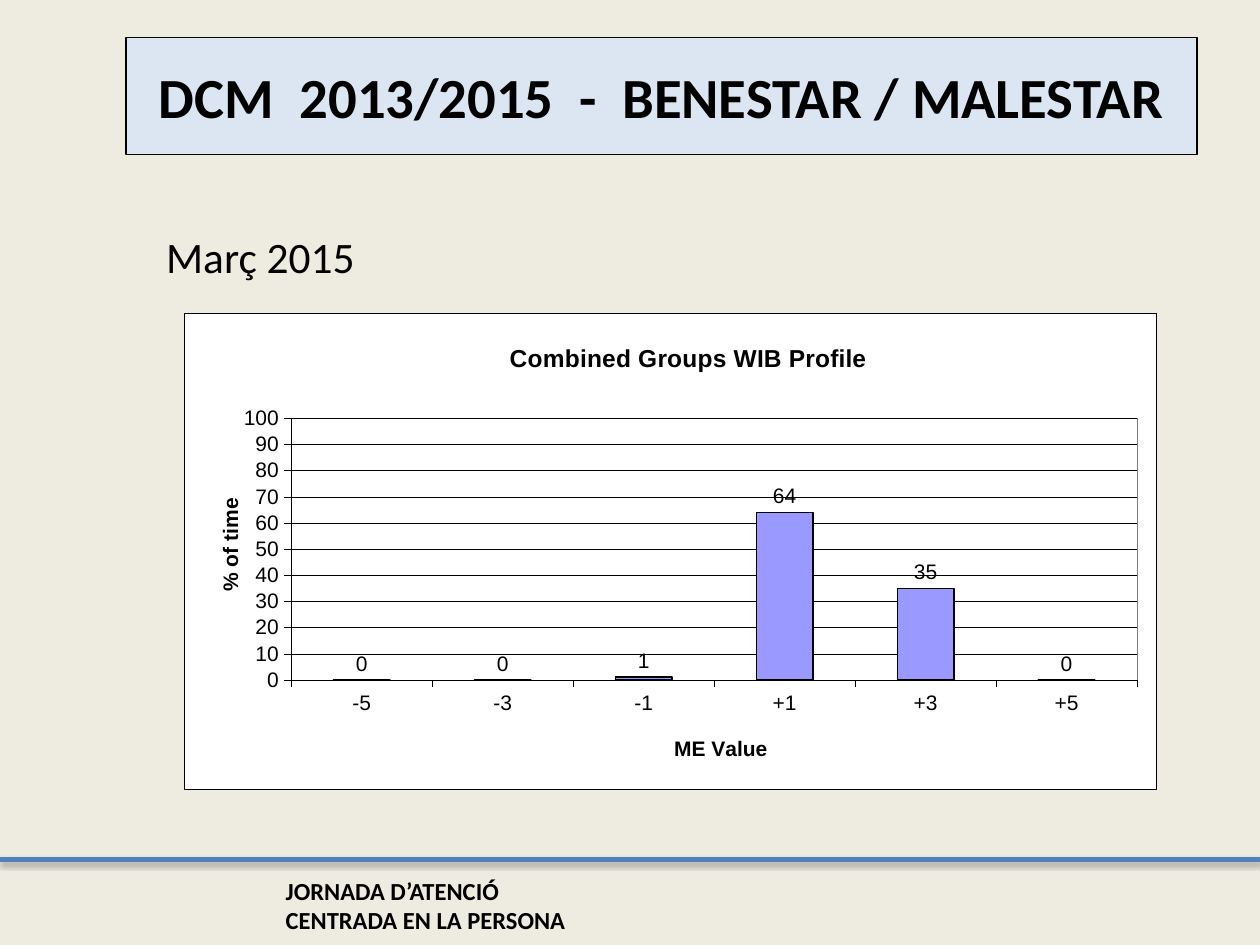
import pptx
import pptx.chart.data
import pptx.dml.color
import pptx.enum.chart
import pptx.enum.shapes
import pptx.enum.text
import pptx.oxml
import pptx.oxml.ns
import pptx.util
from pptx.util import Cm

COLORS = {
    "background": "EEECE1", "title": "DCE6F2", "rule": "4F81BD",
    "bar": "9999FF", "white": "FFFFFF", "black": "000000", "frame": "808080",
}
NS = ('xmlns:a="http://schemas.openxmlformats.org/drawingml/2006/main" '
      'xmlns:c="http://schemas.openxmlformats.org/drawingml/2006/chart"')
ALIGN = pptx.enum.text.PP_ALIGN
ANCHOR = pptx.enum.text.MSO_ANCHOR


def rgb(name):
    return pptx.dml.color.RGBColor.from_string(COLORS[name])


def set_line(line, color="black", width=0.25):
    line.color.rgb = rgb(color)
    line.width = pptx.util.Pt(width)


def set_font(font, size=12, name="Arial", bold=False):
    font.size = pptx.util.Pt(size)
    font.name = name
    font.bold = bold
    font.color.rgb = rgb("black")


def add_text(tf, text, size=12, name="Calibri", bold=False,
             align=ALIGN.LEFT, anchor=ANCHOR.TOP):
    tf.word_wrap = True
    tf.vertical_anchor = anchor
    p = tf.paragraphs[0]
    p.alignment = align
    r = p.add_run()
    r.text = text
    set_font(r.font, size, name, bold)


def add_label(s, text, x, y, w, h, **fmt):
    add_text(s.shapes.add_textbox(x, y, w, h).text_frame, text, **fmt)


def add_title(s, text):
    sp = s.shapes.add_shape(pptx.enum.shapes.MSO_SHAPE.RECTANGLE,
                            Cm(2.54), Cm(0.76), Cm(21.59), Cm(2.36))
    sp.shadow.inherit = False
    sp.fill.solid()
    sp.fill.fore_color.rgb = rgb("title")
    set_line(sp.line, width=0.75)
    add_text(sp.text_frame, text, size=32.4, bold=True,
             align=ALIGN.CENTER, anchor=ANCHOR.MIDDLE)


def add_rule(s, y, width):
    line = s.shapes.add_connector(pptx.enum.shapes.MSO_CONNECTOR.STRAIGHT,
                                  0, y, width, y)
    set_line(line.line, "rule", 3)
    pt = pptx.util.Pt
    line._element.spPr.append(pptx.oxml.parse_xml(
        f'<a:effectLst {NS}><a:outerShdw blurRad="{pt(3.1)}" dist="{pt(1.8)}" '
        'dir="5400000" rotWithShape="0"><a:srgbClr val="000000">'
        '<a:alpha val="35000"/></a:srgbClr></a:outerShdw></a:effectLst>'))


def place(element, index, x, y, w=None, h=None):
    """Give a chart part a manual layout, in fractions of the chart."""
    for old in element.findall(pptx.oxml.ns.qn("c:layout")):
        element.remove(old)
    tags = '<c:layoutTarget val="inner"/>' if w else ""
    tags += '<c:xMode val="edge"/><c:yMode val="edge"/>'
    for key, value in zip("xywh", (x, y, w, h)):
        if value is not None:
            tags += f'<c:{key} val="{value}"/>'
    element.insert(index, pptx.oxml.parse_xml(
        f'<c:layout {NS}><c:manualLayout>{tags}</c:manualLayout></c:layout>'))


def area_format(line):
    return pptx.oxml.parse_xml(
        f'<c:spPr {NS}><a:solidFill><a:srgbClr val="{COLORS["white"]}"/>'
        f'</a:solidFill><a:ln w="{pptx.util.Pt(0.25)}"><a:solidFill>'
        f'<a:srgbClr val="{COLORS[line]}"/></a:solidFill></a:ln></c:spPr>')


def add_heading(owner, text, x, y, size=12):
    """Title a chart or one of its axes."""
    owner.has_title = True
    title = owner.chart_title if hasattr(owner, "chart_title") else owner.axis_title
    add_text(title.text_frame, text, size=size, name="Arial", bold=True,
             align=ALIGN.CENTER)
    place(title._element, 1, x, y)


def add_profile_chart(s):
    data = pptx.chart.data.CategoryChartData(number_format="0")
    data.categories = ["-5", "-3", "-1", "+1", "+3", "+5"]
    data.add_series("Series 1", (0, 0, 1, 64, 35, 0))
    enum = pptx.enum.chart
    chart = s.shapes.add_chart(enum.XL_CHART_TYPE.COLUMN_CLUSTERED, Cm(3.71),
                               Cm(6.32), Cm(19.61), Cm(9.6), data).chart
    set_font(chart.font)
    chart.has_legend = False
    add_heading(chart, "Combined Groups WIB Profile", 0.33, 0.05, size=14)

    # Axes
    for axis, text, x, y in ((chart.category_axis, "ME Value", 0.5, 0.88),
                             (chart.value_axis, "% of time", 0.03, 0.38)):
        add_heading(axis, text, x, y)
        set_font(axis.tick_labels.font)
        set_line(axis.format.line)
        axis.major_tick_mark = enum.XL_TICK_MARK.OUTSIDE
        axis.minor_tick_mark = enum.XL_TICK_MARK.NONE
    chart.category_axis.tick_label_position = enum.XL_TICK_LABEL_POSITION.LOW
    axis = chart.value_axis
    axis.minimum_scale, axis.maximum_scale, axis.major_unit = 0, 100, 10
    axis.has_major_gridlines = True
    set_line(axis.major_gridlines.format.line)
    axis.tick_labels.number_format = "0"
    axis.tick_labels.number_format_is_linked = False

    # Bars and their values
    plot = chart.plots[0]
    plot.gap_width = 150
    plot.vary_by_categories = False
    series = plot.series[0]
    series.invert_if_negative = False
    series.format.fill.solid()
    series.format.fill.fore_color.rgb = rgb("bar")
    set_line(series.format.line, width=1)
    labels = series.data_labels
    labels.show_value = True
    labels.number_format = "0"
    labels.number_format_is_linked = False
    labels.position = enum.XL_LABEL_POSITION.OUTSIDE_END
    set_font(labels.font)

    # Chart and plot areas
    c_chart = chart._chartSpace.chart
    place(c_chart.plotArea, 0, 0.11, 0.22, 0.87, 0.55)
    c_chart.plotArea.append(area_format("frame"))
    c_chart.addnext(area_format("black"))


def main():
    prs = pptx.Presentation()
    prs.slide_width, prs.slide_height = Cm(25.4), Cm(19.05)
    s = prs.slides.add_slide(prs.slide_layouts[6])
    s.background.fill.solid()
    s.background.fill.fore_color.rgb = rgb("background")

    # Footer
    add_label(s, "JORNADA D’ATENCIÓ CENTRADA EN LA PERSONA",
              Cm(5.51), Cm(17.53), Cm(6.81), Cm(1.45), size=14, bold=True)
    add_rule(s, Cm(17.32), prs.slide_width)

    # Content
    add_title(s, "DCM  2013/2015  -  BENESTAR / MALESTAR")
    add_label(s, "Març 2015", Cm(3.1), Cm(4.52), Cm(4.39), Cm(1.19), size=24.8)
    add_profile_chart(s)
    prs.save("out.pptx")


if __name__ == "__main__":
    main()
